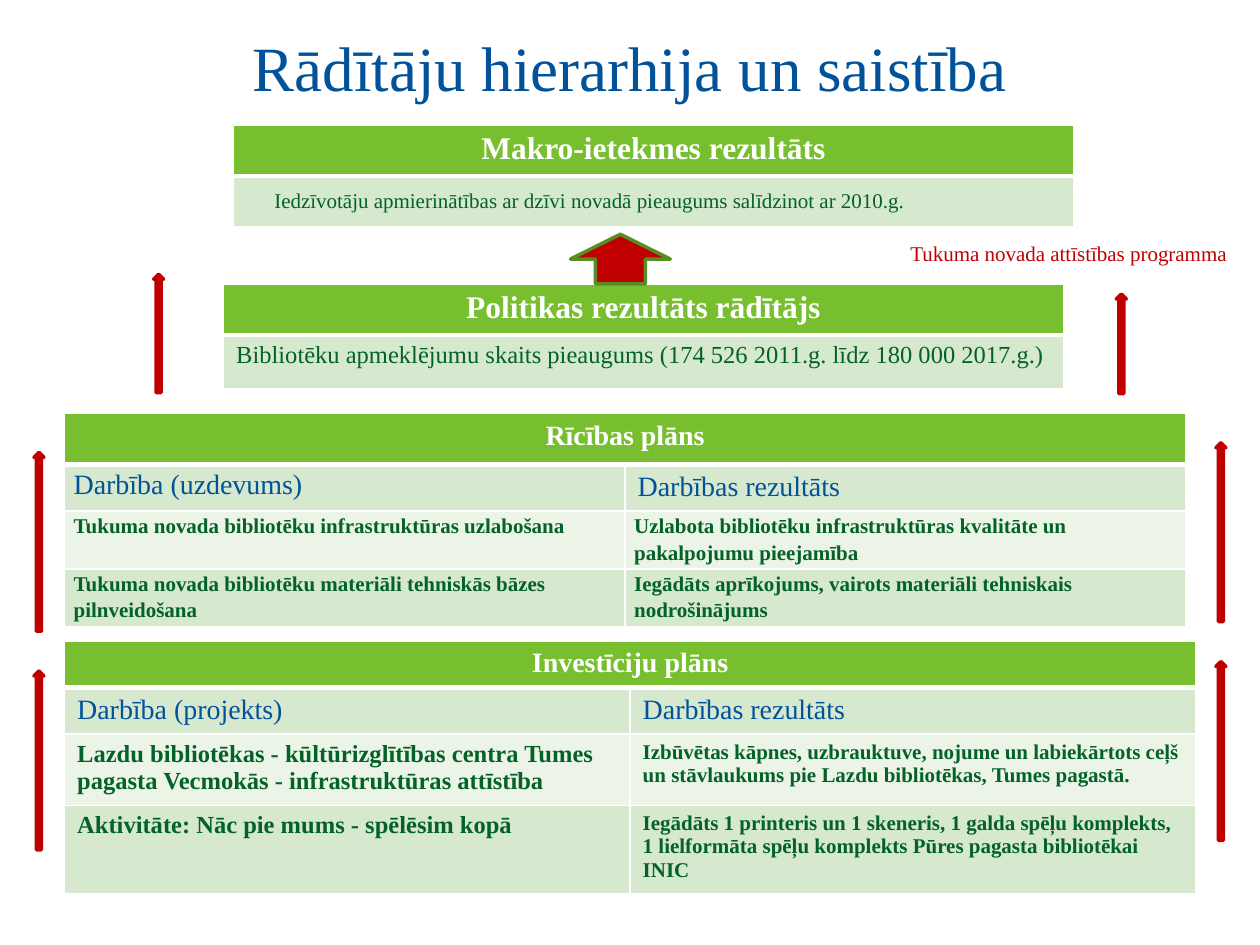
from dataclasses import dataclass

from lxml import etree
from pptx import Presentation
from pptx.dml.color import RGBColor
from pptx.enum.shapes import MSO_SHAPE
from pptx.enum.text import MSO_ANCHOR, PP_ALIGN
from pptx.oxml.ns import qn
from pptx.util import Pt

UP_ARROW = MSO_SHAPE.UP_ARROW
LEFT, CENTER = PP_ALIGN.LEFT, PP_ALIGN.CENTER
TOP, MIDDLE = MSO_ANCHOR.TOP, MSO_ANCHOR.MIDDLE


@dataclass(frozen=True)
class Theme:
    font: str = "Times New Roman"
    white: str = "FFFFFF"
    blue: str = "02529B"
    dark_green: str = "026227"
    header_green: str = "78BF30"
    band_green: str = "D6E8CD"
    pale_green: str = "ECF4E8"
    red: str = "C00000"
    outline_green: str = "598D24"
    title: int = 36
    large: int = 18
    heading: int = 16
    medium: int = 14
    small: int = 12


@dataclass(frozen=True)
class Cell:
    text: str
    size: int
    color: str = Theme.dark_green
    bold: bool = True
    align: int = LEFT
    anchor: int = TOP
    margins: tuple = (7.2, 3.6, 7.2, 3.6)  # left, top, right, bottom
    spaced: bool = False


THEME = Theme()


def add_run(paragraph, text, size, color, bold=False):
    run = paragraph.add_run()
    run.text = text
    run.font.name = THEME.font
    run.font.size = Pt(size)
    run.font.bold = bold
    run.font.color.rgb = RGBColor.from_string(color)


def add_text(slide, box, text, size, color, align, anchor, margins):
    shape = slide.shapes.add_textbox(*map(Pt, box))
    frame = shape.text_frame
    frame.word_wrap = True
    frame.vertical_anchor = anchor
    set_margins(frame, margins)
    paragraph = frame.paragraphs[0]
    paragraph.alignment = align
    add_run(paragraph, text, size, color)


def set_margins(target, margins):
    for side, margin in zip(("left", "top", "right", "bottom"), margins):
        setattr(target, f"margin_{side}", Pt(margin))


def set_borders(table_cell, row):
    """White grid, with a thicker rule under the header row."""
    properties = table_cell._tc.get_or_add_tcPr()
    widths = {"lnL": 1, "lnR": 1, "lnT": 3 if row == 1 else 1, "lnB": 3 if row == 0 else 1}
    for index, (tag, width) in enumerate(widths.items()):
        border = etree.Element(qn(f"a:{tag}"), w=str(Pt(width)))
        fill = etree.SubElement(border, qn("a:solidFill"))
        etree.SubElement(fill, qn("a:srgbClr"), val=THEME.white)
        properties.insert(index, border)


def fill_cell(table_cell, cell, row):
    table_cell.vertical_anchor = cell.anchor
    set_margins(table_cell, cell.margins)
    paragraph = table_cell.text_frame.paragraphs[0]
    paragraph.alignment = cell.align
    if cell.spaced:
        paragraph.line_spacing = 1.15
        paragraph.space_after = Pt(10)
    add_run(paragraph, cell.text, cell.size, cell.color, cell.bold)


def add_table(slide, left, top, width, heights, header, rows):
    """A header across all columns, then rows of banded cells."""
    columns = len(rows[0])
    table = slide.shapes.add_table(
        len(heights), columns, Pt(left), Pt(top), Pt(width), Pt(sum(heights))).table
    for column in table.columns:
        column.width = Pt(width / columns)
    for row, height in enumerate(heights):
        table.rows[row].height = Pt(height)
        color = THEME.band_green if row % 2 else THEME.pale_green
        for column in range(columns):
            table_cell = table.cell(row, column)
            table_cell.fill.solid()
            table_cell.fill.fore_color.rgb = RGBColor.from_string(
                color if row else THEME.header_green)
            set_borders(table_cell, row)
            if row:
                fill_cell(table_cell, rows[row - 1][column], row)
    if columns > 1:
        table.cell(0, 0).merge(table.cell(0, columns - 1))
    fill_cell(table.cell(0, 0), header, 0)


def add_up_arrow(slide, box, line_color):
    shape = slide.shapes.add_shape(UP_ARROW, *map(Pt, box))
    shape.shadow.inherit = False
    shape.fill.solid()
    shape.fill.fore_color.rgb = RGBColor.from_string(THEME.red)
    shape.line.color.rgb = RGBColor.from_string(line_color)
    shape.line.width = Pt(2)


def header_cell(text, size):
    return Cell(text, size, THEME.white, align=CENTER)


def subheading(text, **options):
    return Cell(text, THEME.heading, THEME.blue, bold=False, **options)


def main():
    presentation = Presentation()
    presentation.slide_width, presentation.slide_height = Pt(720), Pt(540)
    slide = presentation.slides.add_slide(presentation.slide_layouts[6])

    # Title
    add_text(slide, (36, 21.6, 648, 33.1), "Rādītāju hierarhija un saistība",
             THEME.title, THEME.blue, CENTER, MIDDLE, (0, 0, 0, 0))

    # Investment plan
    add_table(slide, 36.9, 366.6, 646.4, (24.8, 24.8, 38.3, 46.9),
              header_cell("Investīciju plāns", THEME.heading), [
        (subheading("Darbība (projekts)"), subheading("Darbības rezultāts")),
        (Cell("Lazdu bibliotēkas - kūltūrizglītības centra Tumes pagasta Vecmokās"
              " - infrastruktūras attīstība", THEME.medium),
         Cell("Izbūvētas kāpnes, uzbrauktuve, nojume un labiekārtots ceļš un"
              " stāvlaukums pie Lazdu bibliotēkas, Tumes pagastā.", THEME.small)),
        (Cell("Aktivitāte: Nāc pie mums - spēlēsim kopā", THEME.medium),
         Cell("Iegādāts 1 printeris un 1 skeneris, 1 galda spēļu komplekts,"
              " 1 lielformāta spēļu komplekts Pūres pagasta bibliotēkai INIC",
              THEME.small)),
    ])

    # Action plan
    tight = {"margins": (5.2, 0, 5.2, 0), "spaced": True}
    add_table(slide, 36.9, 236.4, 640.6, (29.2, 24.8, 30.2, 30.2),
              header_cell("Rīcības plāns", THEME.heading), [
        (subheading("Darbība (uzdevums)", **tight), subheading("Darbības rezultāts")),
        (Cell("Tukuma novada bibliotēku infrastruktūras uzlabošana",
              THEME.small, **tight),
         Cell("Uzlabota bibliotēku infrastruktūras kvalitāte un pakalpojumu"
              " pieejamība", THEME.small, **tight)),
        (Cell("Tukuma novada bibliotēku materiāli tehniskās bāzes pilnveidošana",
              THEME.small, **tight),
         Cell("Iegādāts aprīkojums, vairots materiāli tehniskais nodrošinājums",
              THEME.small, **tight)),
    ])

    # Policy result
    add_table(slide, 127.8, 162.6, 479.9, (26.6, 31),
              header_cell("Politikas rezultāts rādītājs", THEME.large), [
        (Cell("Bibliotēku apmeklējumu skaits pieaugums (174 526 2011.g. līdz"
              " 180 000 2017.g.)", THEME.medium, bold=False, align=CENTER,
              margins=(3.6, 3.6, 7.2, 3.6)),),
    ])

    # Macro-impact result
    add_table(slide, 133.5, 71.4, 479.9, (29.2, 29.2),
              header_cell("Makro-ietekmes rezultāts", THEME.large), [
        (Cell("Iedzīvotāju apmierinātības ar dzīvi novadā pieaugums salīdzinot"
              " ar 2010.g.", THEME.small, bold=False, align=CENTER, anchor=MIDDLE,
              margins=(7.2, 3.6, 80, 3.6)),),
    ])

    # Arrow between the two results, and the programme label
    add_up_arrow(slide, (326, 133.9, 57, 28.3), THEME.outline_green)
    add_text(slide, (513.1, 133.9, 198.7, 21.8), "Tukuma novada attīstības programma",
             THEME.small, THEME.red, LEFT, TOP, (7.2, 3.6, 7.2, 3.6))

    # Side arrows: left, top, height
    for left, top, height in (
        (694.8, 378, 102.2), (19.4, 383.4, 102.2),
        (694.8, 253, 102.2), (19.4, 258.5, 102.2),
        (637.9, 168, 56.9), (87.8, 156.7, 67.7),
    ):
        add_up_arrow(slide, (left, top, 5.7, height), THEME.red)

    presentation.save("out.pptx")


if __name__ == "__main__":
    main()
